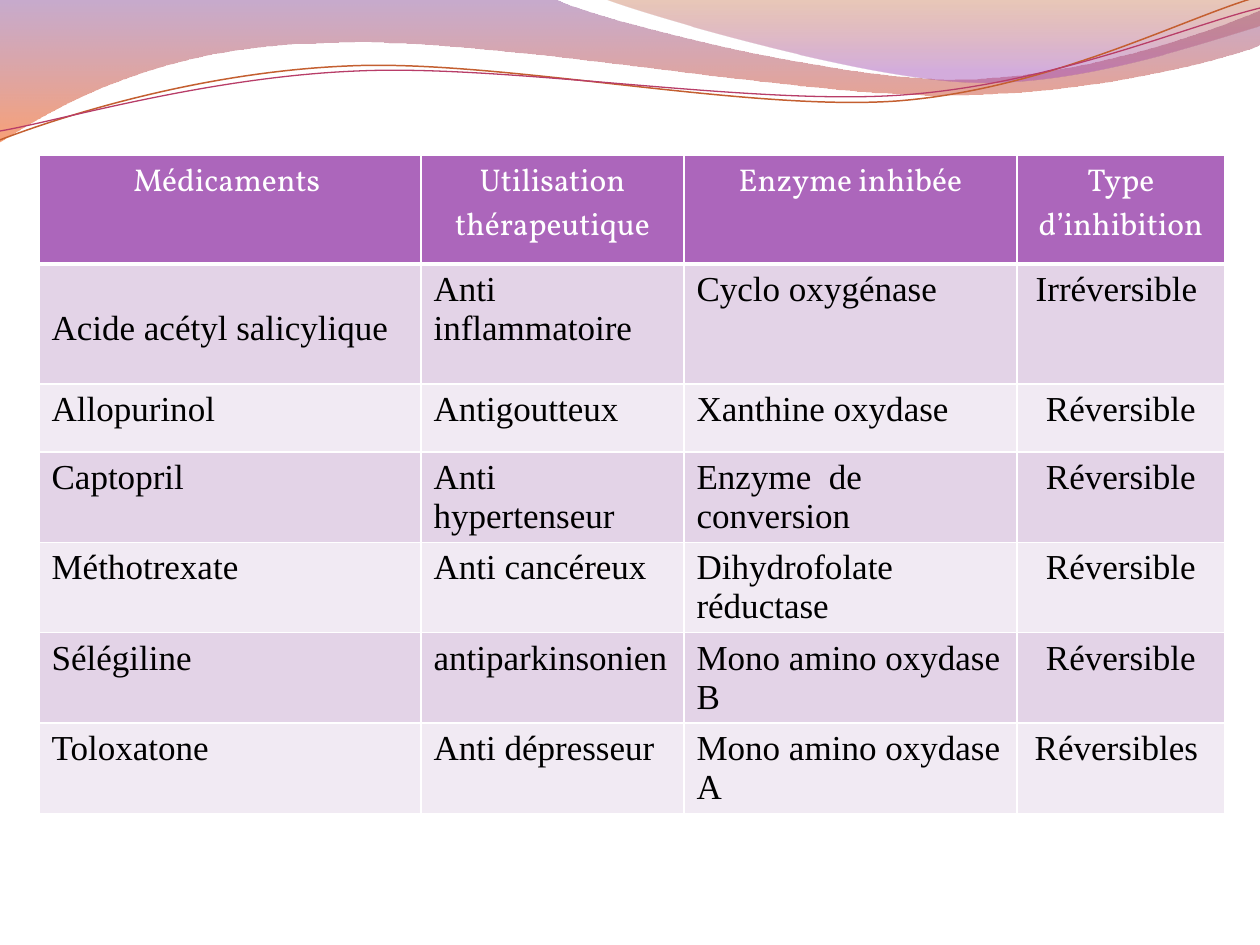
from dataclasses import dataclass
from math import cos, radians, sin

from lxml.etree import SubElement
from pptx import Presentation
from pptx.dml.color import RGBColor as RGB
from pptx.enum.text import PP_ALIGN as Align
from pptx.oxml.ns import qn
from pptx.util import Emu, Pt

EMU_PER_PX = 914400 / 126


@dataclass(frozen=True)
class Theme:
    header_fill: str = "AC66BB"
    bands: tuple = ("E3D3E7", "F1EAF3")
    header_text: str = "FFFFFF"
    body_text: str = "000000"
    border: str = "FFFFFF"
    # Gradient stops: position, colour, opacity in percent
    wide_wave: tuple = ((0, "834591", 45), (1, "F35307", 55))
    right_wave: tuple = ((0, "B74915", 30), (0.8, "A14BB4", 45))
    orange_line: str = "C45F30"
    pink_line: str = "B83D68"
    header_font: str = "Vollkorn"
    body_font: str = "Times New Roman"
    header_size: int = 18
    body_size: int = 20


def px(length):
    return Emu(round(length * EMU_PER_PX))


def turned(point, centre, degrees):
    """The point turned clockwise about the centre."""
    x, y = point[0] - centre[0], point[1] - centre[1]
    c, s = cos(radians(degrees)), sin(radians(degrees))
    return centre[0] + x * c - y * s, centre[1] + x * s + y * c


def bend(shape, pieces):
    """Join each three line steps that stand for one Bézier curve."""
    steps = iter(list(shape._element.iter(qn("a:lnTo"))))
    for piece in pieces:
        first = next(steps)
        if len(piece) == 2:
            continue
        first.tag = qn("a:cubicBezTo")
        for _ in range(2):
            control = next(steps)
            first.append(control[0])
            control.getparent().remove(control)


class SlideBuilder:
    def __init__(self, slide, theme):
        self.slide = slide
        self.theme = theme

    def outline(self, start, pieces, close, centre=(0, 0), rotation=0):
        """Draw pieces: 2 numbers make a line, 6 a cubic Bézier curve."""
        points = [start] + [piece[i:i + 2] for piece in pieces for i in range(0, len(piece), 2)]
        points = [turned(point, centre, -rotation) for point in points]
        first, *rest = [(px(x), px(y)) for x, y in points]
        builder = self.slide.shapes.build_freeform(*first)
        builder.add_line_segments(rest, close=close)
        shape = builder.convert_to_shape()
        bend(shape, pieces)
        shape.rotation = rotation
        shape.shadow.inherit = False
        return shape

    def wave(self, start, pieces, stops):
        shape = self.outline(start, pieces, True)
        shape.line.fill.background()
        shape.fill.gradient()
        shape.fill.gradient_angle = 270
        for stop, (position, colour, _) in zip(shape.fill.gradient_stops, stops):
            stop.position = position
            stop.color.rgb = RGB.from_string(colour)
        colours = shape._element.spPr.iter(qn("a:srgbClr"))
        for colour, (_, _, opacity) in zip(colours, stops):
            SubElement(colour, qn("a:alpha"), val=str(opacity * 1000))

    def curve(self, start, pieces, centre, colour, width):
        shape = self.outline(start, pieces, False, centre, -2.7)
        shape.fill.background()
        shape.line.color.rgb = RGB.from_string(colour)
        shape.line.width = Pt(width)

    def header_borders(self, cell):
        properties = cell._tc.get_or_add_tcPr()
        for side, width in (("L", 1), ("R", 1), ("T", 1), ("B", 3)):
            line = SubElement(properties, qn(f"a:ln{side}"), w=str(Pt(width)))
            fill = SubElement(line, qn("a:solidFill"))
            SubElement(fill, qn("a:srgbClr"), val=self.theme.border)

    def cell(self, cell, text, row, centred):
        theme = self.theme
        header = row == 0
        if header:
            self.header_borders(cell)
        cell.fill.solid()
        fill = theme.header_fill if header else theme.bands[(row - 1) % 2]
        cell.fill.fore_color.rgb = RGB.from_string(fill)
        cell.text = text
        paragraph = cell.text_frame.paragraphs[0]
        paragraph.alignment = Align.CENTER if centred else Align.LEFT
        font = paragraph.font
        font.name = theme.header_font if header else theme.body_font
        font.size = Pt(theme.header_size if header else theme.body_size)
        font.bold = False
        font.color.rgb = RGB.from_string(theme.header_text if header else theme.body_text)

    def table(self, left, top, widths, heights, rows):
        frame = self.slide.shapes.add_table(
            len(rows), len(widths), px(left), px(top), px(sum(widths)), px(sum(heights)))
        table = frame.table
        for column, width in zip(table.columns, widths):
            column.width = px(width)
        for table_row, height in zip(table.rows, heights):
            table_row.height = px(height)
        last = len(widths) - 1
        for r, texts in enumerate(rows):
            for c, text in enumerate(texts):
                self.cell(table.cell(r, c), text, r, r == 0 or c == last)
        return table


DRUGS = [
    ("Médicaments ", "Utilisation thérapeutique", "Enzyme inhibée", "Type d’inhibition"),
    ("Acide acétyl salicylique", "Anti inflammatoire", "Cyclo oxygénase", "Irréversible "),
    ("Allopurinol", "Antigoutteux", "Xanthine oxydase", "Réversible"),
    ("Captopril", "Anti hypertenseur", "Enzyme  de conversion", "Réversible"),
    ("Méthotrexate", "Anti cancéreux", "Dihydrofolate réductase", "Réversible"),
    ("Sélégiline", "antiparkinsonien", "Mono amino oxydase B", "Réversible"),
    ("Toloxatone", "Anti dépresseur", "Mono amino oxydase A", "Réversibles "),
]


def main():
    theme = Theme()
    deck = Presentation()
    deck.slide_width, deck.slide_height = px(1260), px(945)
    page = SlideBuilder(deck.slides.add_slide(deck.slide_layouts[6]), theme)

    page.wave((0, 0), [
        (554, -1), (600, 21, 837, 79, 955, 79), (1075, 79, 1207, 33, 1260, 11),
        (1261, 45), (1239, 55, 1096, 96, 940, 95), (784, 95, 481, 35, 324, 43),
        (163, 45, 58, 105, -1, 142)], theme.wide_wave)
    page.wave((604, -1), [
        (641, 14, 859, 78, 969, 82), (1079, 87, 1211, 40, 1260, 26),
        (1260, 0)], theme.right_wave)
    page.curve((0, 140), [
        (60, 117, 199, 72, 349, 66), (498, 59, 747, 112, 898, 101),
        (1049, 89, 1182, 19, 1257, -3)], (629, 72), theme.orange_line, 0.85)
    page.curve((0, 131), [
        (59, 121, 207, 77, 357, 71), (508, 64, 752, 106, 903, 95),
        (1053, 84, 1186, 26, 1260, 8)], (629, 74), theme.pink_line, 0.75)

    drugs = page.table(39, 155, (382, 263, 333, 208), (109, 120) + (68,) * 5, DRUGS)
    drugs.cell(1, 0).margin_top = px(45)  # sets the first drug one line lower

    deck.save("out.pptx")


if __name__ == "__main__":
    main()
